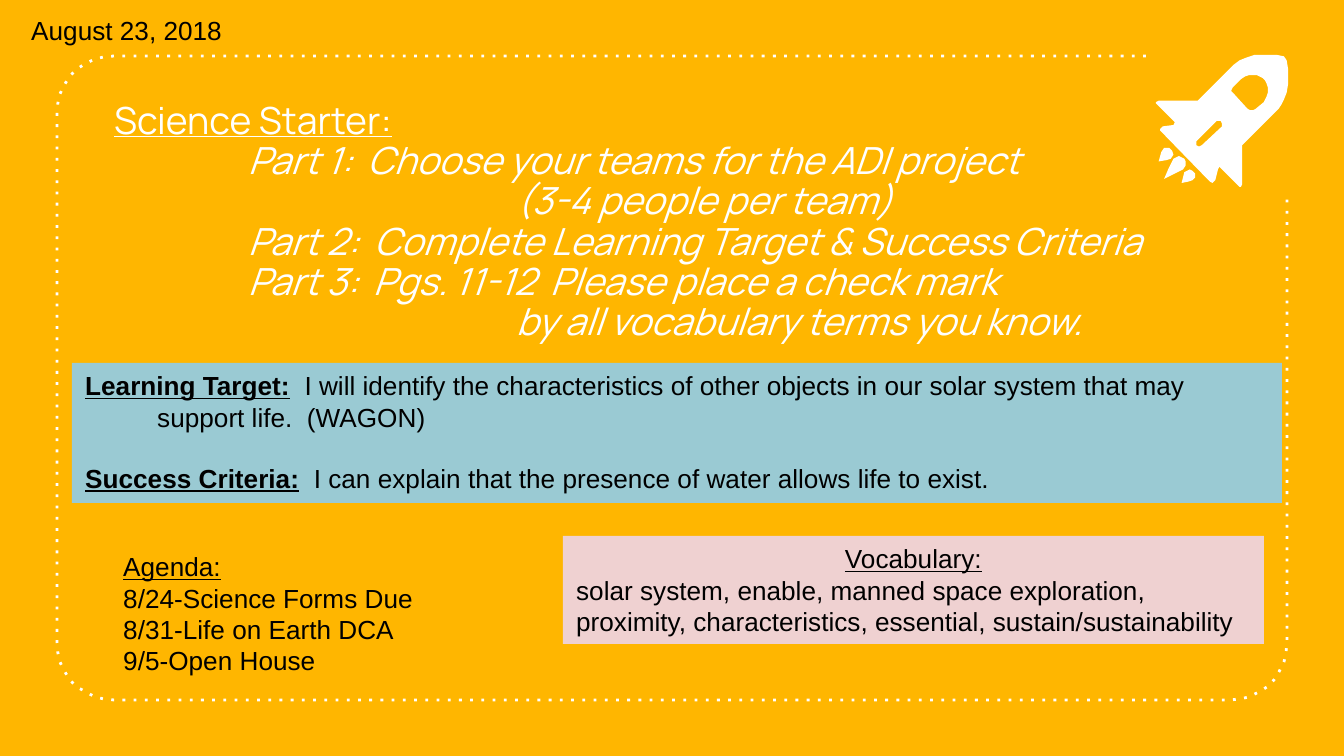
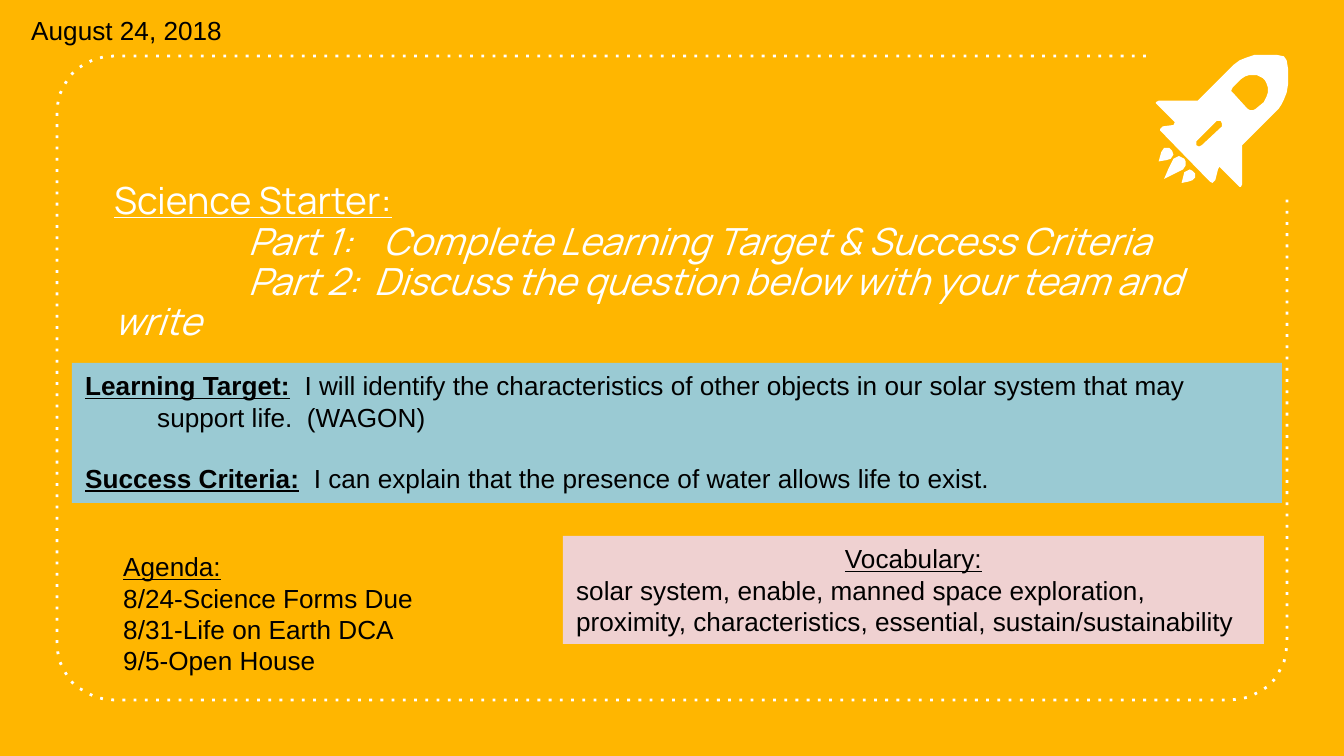
from math import cos, radians, sin

from pptx import Presentation
from pptx.dml.color import RGBColor
from pptx.enum.dml import MSO_LINE
from pptx.enum.shapes import MSO_SHAPE
from pptx.enum.text import MSO_ANCHOR, MSO_AUTO_SIZE, PP_ALIGN
from pptx.oxml.ns import qn
from pptx.util import Pt

PX = 914400 / 134.4
COLORS = {"amber": "FFB600", "white": "FFFFFF", "black": "000000",
          "blue": "9ACAD3", "pink": "EFD1D1"}
TITLE_FONT, BODY_FONT = "Manrope", "Arial"
TAB = 134

# Rocket outlines on a grid 98 units wide
ROCKET_GRID = 98
ROCKET_BODY = [
    # window
    [(72, 15), (75, 15), (77, 16), (79, 17), (81, 19), (82, 21), (83, 24),
     (83, 28), (82, 31), (80, 35), (74, 40), (72, 41), (70, 41), (68, 40),
     (58, 29), (56, 27), (56, 26), (57, 24), (63, 18), (66, 16), (69, 15)],
    # slot
    [(46, 49), (48, 49), (49, 51), (49, 53), (34, 67), (32, 68), (30, 67),
     (30, 64), (45, 49)],
    # hull
    [(82, 0), (73, 0), (67, 2), (62, 4), (58, 7), (31, 34), (2, 34), (0, 35),
     (0, 36), (14, 50), (13, 52), (5, 53), (3, 55), (3, 56), (40, 94),
     (42, 95), (44, 93), (46, 85), (47, 83), (61, 97), (62, 98), (63, 98),
     (64, 96), (64, 67), (91, 40), (93, 37), (95, 33), (97, 28), (98, 22),
     (98, 10), (97, 4), (95, 1), (90, 0)],
]
FLAMES = [
    [(17, 75), (15, 76), (13, 77), (9, 85), (6, 92), (8, 91), (18, 86),
     (20, 85), (22, 82), (22, 79), (21, 77), (19, 76)],
    [(25, 85), (23, 86), (21, 87), (20, 91), (19, 95), (24, 94), (27, 93),
     (29, 91), (29, 88), (27, 86)],
    [(8, 69), (6, 69), (4, 72), (2, 79), (8, 78), (11, 77), (13, 74),
     (12, 71), (10, 69)],
]

TARGETS = [
    ("Learning Target:", "  I will identify the characteristics of other "
     "objects in our solar system that may support life.  (WAGON)"),
    ("Success Criteria:", "  I can explain that the presence of water allows "
     "life to exist."),
]
AGENDA = ["Agenda:", "8/24-Science Forms Due", "8/31-Life on Earth DCA",
          "9/5-Open House"]
VOCABULARY = ["Vocabulary:", "solar system, enable, manned space exploration, "
              "proximity, characteristics, essential, sustain/sustainability"]

# Each day: date and starter lines as (tabs before the line, text)
DAYS = [
    ("August 23, 2018", [
        (1, "Part 1:  Choose your teams for the ADI project"),
        (3, "(3-4 people per team)"),
        (1, "Part 2:  Complete Learning Target & Success Criteria"),
        (1, "Part 3:  Pgs. 11-12  Please place a check mark"),
        (3, "by all vocabulary terms you know."),
    ]),
    ("August 24, 2018", [
        (1, "Part 1:  \tComplete Learning Target & Success Criteria"),
        (1, "Part 2:  Discuss the question below with your team and write"),
    ]),
]


def px(n):
    return round(n * PX)


def rgb(name):
    return RGBColor.from_string(COLORS[name])


def set_font(font, name, size, color):
    font.name, font.size = name, Pt(size)
    font.color.rgb = rgb(color)


def set_indent(p, left, first):
    pPr = p._p.get_or_add_pPr()
    pPr.set("marL", str(px(left)))
    pPr.set("indent", str(px(first)))


def fill_paragraphs(tf, lines):
    """Put one line in each paragraph and return the paragraphs."""
    tf.text = "\n".join(lines)
    return tf.paragraphs


def add_outline(slide, contours, origin, scale, close=True):
    (start, *rest), *others = contours
    builder = slide.shapes.build_freeform(*start, scale=scale)
    builder.add_line_segments(rest, close=close)
    for first, *points in others:
        builder.move_to(*first)
        builder.add_line_segments(points, close=close)
    sp = builder.convert_to_shape(px(origin[0]), px(origin[1]))
    sp.shadow.inherit = False
    return sp


def add_frame(slide, x, y, w, h, r=57, gap=141):
    """Dotted rounded frame, open at the top right corner."""
    points = [(w - gap, 0)]
    corners = [(r, r, 270), (r, h - r, 180), (w - r, h - r, 90)]
    for cx, cy, start in corners:
        for step in range(0, 91, 10):
            a = radians(start - step)
            points.append((cx + r * cos(a), cy + r * sin(a)))
    points.append((w, gap))
    sp = add_outline(slide, [points], (x, y), PX, close=False)
    sp.fill.background()
    sp.line.color.rgb = rgb("white")
    sp.line.width = Pt(1.5)
    sp.line.dash_style = MSO_LINE.ROUND_DOT
    sp.element.find(".//" + qn("a:prstDash")).set("val", "dot")
    sp.element.getparent().insert(2, sp.element)  # behind the title


def add_rocket(slide, x, y, size):
    parts = []
    for contours in [ROCKET_BODY] + [[flame] for flame in FLAMES]:
        sp = add_outline(slide, contours, (x, y), size * PX / ROCKET_GRID)
        sp.fill.solid()
        sp.fill.fore_color.rgb = rgb("white")
        sp.line.fill.background()
        parts.append(sp)
    slide.shapes.add_group_shape(parts)


def add_starter(slide, lines, x, y, w, h):
    title = slide.shapes.title
    title.left, title.top, title.width, title.height = map(px, (x, y, w, h))
    tf = title.text_frame
    tf.auto_size = MSO_AUTO_SIZE.NONE
    tf.vertical_anchor = MSO_ANCHOR.BOTTOM
    tf.margin_left = tf.margin_right = tf.margin_top = tf.margin_bottom = px(13)
    texts = ["Science Starter:"] + [text for _, text in lines]
    tabs = [0] + [n for n, _ in lines]
    for p, n in zip(fill_paragraphs(tf, texts), tabs):
        p.alignment = PP_ALIGN.LEFT
        p.line_spacing = 0.9
        set_font(p.font, TITLE_FONT, 20, "white")
        p.font.underline, p.font.italic = n == 0, n > 0
        set_indent(p, 0, n * TAB)


def add_panel(slide, lines, x, y, w, h, fill=None):
    """Box of black body text, with a plain fill if one is named."""
    box = tuple(map(px, (x, y, w, h)))
    if fill:
        sp = slide.shapes.add_shape(MSO_SHAPE.RECTANGLE, *box)
        sp.shadow.inherit = False
        sp.fill.solid()
        sp.fill.fore_color.rgb = rgb(fill)
        sp.line.fill.background()
    else:
        sp = slide.shapes.add_textbox(*box)
    tf = sp.text_frame
    tf.word_wrap = True
    tf.auto_size = MSO_AUTO_SIZE.SHAPE_TO_FIT_TEXT
    tf.vertical_anchor = MSO_ANCHOR.TOP
    for p in fill_paragraphs(tf, lines):
        p.alignment = PP_ALIGN.LEFT
        set_font(p.font, BODY_FONT, 14, "black")
    return tf.paragraphs


def add_targets(slide, x, y, w, h):
    labels = [label for label, _ in TARGETS]
    paragraphs = add_panel(slide, labels, x, y, w, h, "blue")
    for p, (_, text) in zip(paragraphs, TARGETS):
        label = p.runs[0]
        label.font.bold = label.font.underline = True
        p.add_run().text = text
        set_indent(p, 72, -72)
    paragraphs[1].space_before = Pt(16)


def add_agenda(slide, x, y, w, h):
    add_panel(slide, AGENDA, x, y, w, h)[0].font.underline = True


def add_vocabulary(slide, x, y, w, h):
    heading = add_panel(slide, VOCABULARY, x, y, w, h, "pink")[0]
    heading.font.underline = True
    heading.alignment = PP_ALIGN.CENTER


def add_day(prs, date, lines):
    slide = prs.slides.add_slide(prs.slide_layouts[5])
    add_frame(slide, 57, 56, 1230, 644)
    add_starter(slide, lines, 101, 67, 1142, 290)
    add_rocket(slide, 1156, 55, 132)
    add_panel(slide, [date], 18, 8, 224, 46)
    add_targets(slide, 72, 363, 1210, 140)
    add_agenda(slide, 110, 544, 335, 140)
    add_vocabulary(slide, 563, 536, 701, 108)


def main():
    prs = Presentation()
    prs.slide_width, prs.slide_height = px(1344), px(756)
    background = prs.slide_master.background.fill
    background.solid()
    background.fore_color.rgb = rgb("amber")
    for date, lines in DAYS:
        add_day(prs, date, lines)
    prs.save("out.pptx")


if __name__ == "__main__":
    main()
